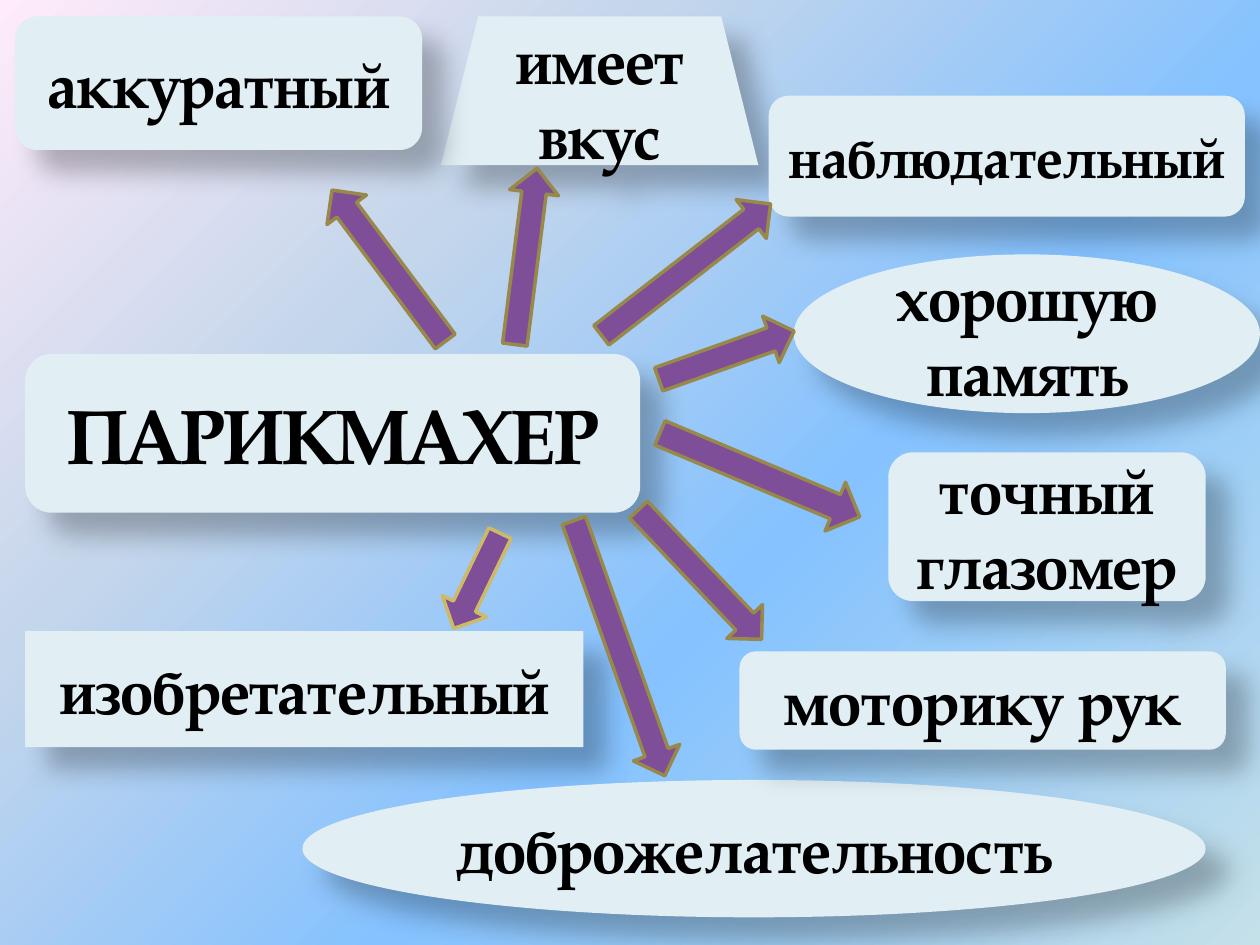
"""Build a mind-map slide of the qualities a hairdresser needs."""
from pptx import Presentation
from pptx import util as u
from pptx.dml.color import RGBColor
from pptx.enum import shapes, text
from pptx.oxml import parse_xml
from pptx.oxml.ns import nsdecls

S = shapes.MSO_SHAPE

THEME = {
    "font": "TeX Gyre Pagella",
    "card": "E1EFF4",
    "ink": "000000",
    "arrow": "7E4E99",
    "edge": "98894B",
    "edge_light": "CEB966",
    "title": 44,
    "body": 36,
    "small": 32,
    "line": 2,
    "shadow": {"alpha": 26, "blur": 15, "dist": 18, "angle": 45},
    "stops": [(0, "C4E0E9"), (40, "85C2FF"), (70, "C4D6EB"), (100, "FFEBFA")],
}

CARDS = [
    ("ПАРИКМАХЕР", S.ROUNDED_RECTANGLE, "title", (14.4, 202.3, 351.4, 90.7)),
    ("имеет вкус", S.TRAPEZOID, "body", (252, 9.4, 181.4, 85)),
    ("наблюдательный", S.ROUNDED_RECTANGLE, "small", (439.2, 54.7, 272.2, 69.1)),
    ("изобретательный", S.RECTANGLE, "body", (14.4, 360.7, 319, 66.2)),
    ("аккуратный", S.ROUNDED_RECTANGLE, "body", (8.6, 9.4, 232.6, 76.3)),
    ("хорошую память", S.OVAL, "body", (453.6, 145.4, 266.4, 90.7)),
    ("доброжелательность", S.OVAL, "body", (172.8, 445.7, 516.2, 78.5)),
    ("моторику рук", S.FLOWCHART_ALTERNATE_PROCESS, "body", (422.6, 372.2, 277.9, 56.2)),
    ("точный глазомер", S.FLOWCHART_ALTERNATE_PROCESS, "body", (507.6, 258.5, 181.4, 85)),
]

ARROW_W = 28.1
ARROWS = [
    (S.UP_ARROW, (222.1, 151.9), (ARROW_W, 108), 323.2, "edge"),
    (S.UP_ARROW, (400, 328.3), (ARROW_W, 102.2), 136.5, "edge"),
    (S.UP_ARROW, (353.9, 370.4), (ARROW_W, 154.8), 160.4, "edge"),
    (S.UP_ARROW, (415.1, 203), (ARROW_W, 82.1), 70.4, "edge"),
    (S.UP_ARROW, (272.5, 331.9), (ARROW_W, 60.5), 205.9, "edge_light"),
    (S.UP_ARROW, (300.6, 146.5), (ARROW_W, 101.5), 7.2, "edge"),
    (S.UP_ARROW, (392, 154.1), (ARROW_W, 122.4), 52.2, "edge"),
    (S.RIGHT_ARROW, (434.2, 271.4), (123.8, 30.2), 22.8, "edge"),
]


def color(name):
    return RGBColor.from_string(THEME[name])


def apply(obj, values):
    for name, value in values.items():
        setattr(obj, name, value)


def set_background(slide):
    stops = "".join(f'<a:gs pos="{pos * 1000}"><a:srgbClr val="{rgb}"/></a:gs>'
                    for pos, rgb in THEME["stops"])
    slide.shapes._spTree.addprevious(parse_xml(
        f'<p:bg {nsdecls("p", "a")}><p:bgPr><a:gradFill rotWithShape="1">'
        f'<a:gsLst>{stops}</a:gsLst><a:path path="circle">'
        '<a:fillToRect l="100000" t="100000"/></a:path></a:gradFill>'
        '<a:effectLst/></p:bgPr></p:bg>'))


def add_shape(slide, kind, box, fill):
    sp = slide.shapes.add_shape(kind, *map(u.Pt, box))
    sp.shadow.inherit = False
    sp.fill.solid()
    sp.fill.fore_color.rgb = color(fill)
    return sp


def add_shadow(sp):
    sh = THEME["shadow"]
    sp._element.spPr.find("{*}effectLst").append(parse_xml(
        f'<a:outerShdw {nsdecls("a")} blurRad="{u.Pt(sh["blur"])}" '
        f'dist="{u.Pt(sh["dist"])}" dir="{sh["angle"] * 60000}" '
        f'algn="tl" rotWithShape="0"><a:srgbClr val="{THEME["ink"]}">'
        f'<a:alpha val="{sh["alpha"] * 1000}"/></a:srgbClr></a:outerShdw>'))


def add_card(slide, label, kind, size, box):
    sp = add_shape(slide, kind, box, "card")
    sp.line.fill.background()
    add_shadow(sp)
    tf = sp.text_frame
    apply(tf, {"word_wrap": True, "vertical_anchor": text.MSO_ANCHOR.MIDDLE})
    p = tf.paragraphs[0]
    p.alignment = text.PP_ALIGN.CENTER
    r = p.add_run()
    r.text = label
    apply(r.font, {"name": THEME["font"], "size": u.Pt(THEME[size]), "bold": True})
    r.font.color.rgb = color("ink")


def add_arrow(slide, kind, center, size, angle, edge):
    (cx, cy), (w, h) = center, size
    sp = add_shape(slide, kind, (cx - w / 2, cy - h / 2, w, h), "arrow")
    sp.rotation = angle
    sp.line.width = u.Pt(THEME["line"])
    sp.line.color.rgb = color(edge)


def main():
    prs = Presentation()
    apply(prs, {"slide_width": u.Pt(720), "slide_height": u.Pt(540)})
    slide = prs.slides.add_slide(prs.slide_layouts[6])
    set_background(slide)
    for card in CARDS:
        add_card(slide, *card)
    for arrow in ARROWS:
        add_arrow(slide, *arrow)
    prs.save("out.pptx")


if __name__ == "__main__":
    main()
